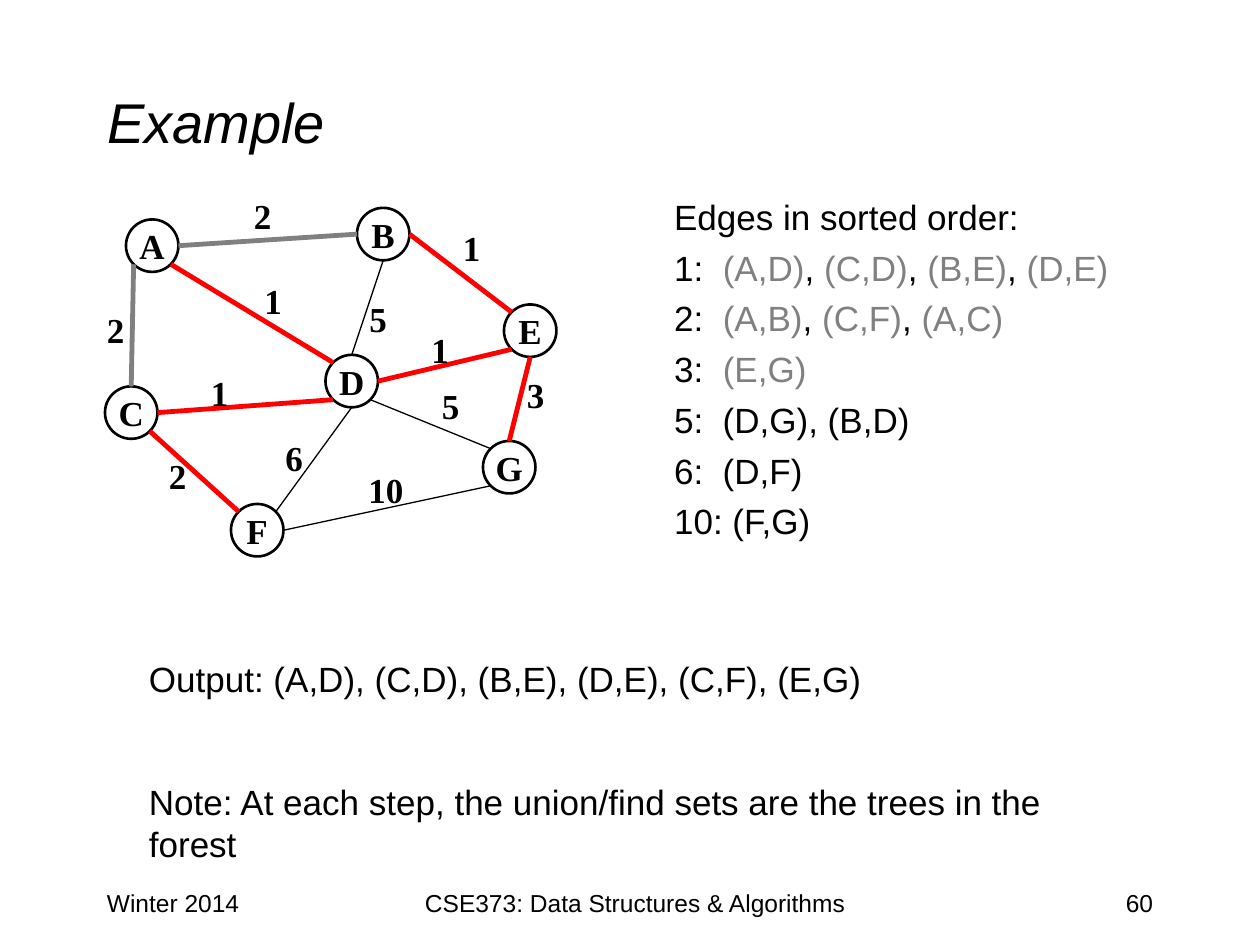
"""Build the minimum spanning tree example slide."""
import math
from dataclasses import dataclass

import pptx
import pptx.dml.color
import pptx.enum.shapes
import pptx.enum.text
import pptx.oxml.ns
import pptx.util

ALIGN = pptx.enum.text.PP_ALIGN
CELL = pptx.util.Inches(1) // 12
NODE_SIZE = 5
LABEL_HEIGHT = 5.28
HANG = 4.5
COLORS = {"ink": "000000", "done": "808080", "tree": "FF0000"}
WIDTHS = {"ink": 0.75, "done": 2.75, "tree": 2.75}
ANGLES = {"right": 0, "lower right": 45, "bottom": 90, "lower left": 135,
          "left": 180, "upper left": 225, "top": 270, "upper right": 315}


@dataclass
class Node:
    name: str
    column: float
    row: float

    def point(self, side: str) -> tuple[int, int]:
        angle = math.radians(ANGLES[side])
        radius = NODE_SIZE / 2
        return (cells(self.column + radius * (1 + math.cos(angle))),
                cells(self.row + radius * (1 + math.sin(angle))))


@dataclass
class Edge:
    start: str
    start_side: str
    end: str
    end_side: str
    state: str
    weight: str
    column: float
    row: float


@dataclass
class Footer:
    text: str
    column: float
    width: float
    align: ALIGN


@dataclass
class Group:
    lead: str
    done: tuple[str, ...] = ()
    waiting: str = ""


NODES = [Node("A", 12, 20.9), Node("B", 34, 19.8), Node("C", 10, 36.8),
         Node("D", 31, 33.8), Node("F", 22, 48), Node("E", 48, 29),
         Node("G", 46, 42)]
EDGES = [
    Edge("A", "lower left", "C", "top", "done", "2", 9, 28.8),
    Edge("B", "left", "A", "right", "done", "2", 23, 17.9),
    Edge("D", "top", "B", "bottom", "ink", "5", 34, 27.7),
    Edge("A", "lower right", "D", "upper left", "tree", "1", 24, 26),
    Edge("C", "right", "D", "lower left", "tree", "1", 18.9, 34.8),
    Edge("D", "right", "E", "lower left", "tree", "1", 39.9, 30.7),
    Edge("E", "upper left", "B", "right", "tree", "1", 42.9, 21),
    Edge("C", "lower right", "F", "upper left", "tree", "2", 14.9, 42.7),
    Edge("D", "bottom", "F", "upper right", "ink", "6", 26, 41),
    Edge("D", "lower right", "G", "upper left", "ink", "5", 40.9, 36),
    Edge("G", "top", "E", "bottom", "tree", "3", 49, 35),
    Edge("F", "right", "G", "lower left", "ink", "10", 33.9, 44),
]
GROUPS = [
    Group("Edges in sorted order:"),
    Group("1:  ", ("(A,D)", "(C,D)", "(B,E)", "(D,E)")),
    Group("2:  ", ("(A,B)", "(C,F)", "(A,C)")),
    Group("3:  ", ("(E,G)",)),
    Group("5:  ", waiting="(D,G), (B,D)"),
    Group("6:  ", waiting="(D,F)"),
    Group("10: ", waiting="(F,G)"),
]
FOOTERS = [Footer("Winter 2014", 9, 25, ALIGN.LEFT),
           Footer("60", 86, 25, ALIGN.RIGHT),
           Footer("CSE373: Data Structures & Algorithms", 38, 45, ALIGN.CENTER)]


def cells(count: float) -> int:
    """Turn a count of grid cells into a length."""
    return round(count * CELL)


def color(name: str) -> pptx.dml.color.RGBColor:
    """Look up a named colour."""
    return pptx.dml.color.RGBColor.from_string(COLORS[name])


def add_span(para, text: str, size: float = 20, face: str = "Arial",
             tone: str = "ink", bold: bool = False, italic: bool = False) -> None:
    """Add one formatted run."""
    span = para.add_run()
    span.text = text
    span.font.size = pptx.util.Pt(size)
    span.font.name = face
    span.font.bold = bold
    span.font.italic = italic
    span.font.color.rgb = color(tone)


def place(box, column: float, row: float, width: float, height: float) -> None:
    """Move a shape to its grid cells."""
    box.left, box.top = cells(column), cells(row)
    box.width, box.height = cells(width), cells(height)


def add_box(page, column: float, row: float, width: float, height: float,
            wrap: bool = True):
    """Add an empty text box and return its first paragraph."""
    box = page.shapes.add_textbox(cells(column), cells(row), cells(width), cells(height))
    box.text_frame.word_wrap = wrap
    return box.text_frame.paragraphs[0]


def format_list_item(para) -> None:
    """Give a paragraph a hanging indent, space before and no bullet."""
    para.space_before = pptx.util.Pt(5)
    properties = para._p.get_or_add_pPr()
    properties.set("marL", str(cells(HANG)))
    properties.set("indent", str(-cells(HANG)))
    properties.append(pptx.oxml.parse_xml(
        f'<a:buNone {pptx.oxml.ns.nsdecls("a")}/>'))


def draw_node(page, node: Node) -> None:
    """Draw a lettered circle."""
    circle = page.shapes.add_shape(
        pptx.enum.shapes.MSO_SHAPE.OVAL, cells(node.column), cells(node.row),
        cells(NODE_SIZE), cells(NODE_SIZE))
    circle.shadow.inherit = False
    circle.fill.background()
    circle.line.color.rgb = color("ink")
    circle.line.width = pptx.util.Pt(1.5)
    frame = circle.text_frame
    frame.word_wrap = False
    frame.vertical_anchor = pptx.enum.text.MSO_ANCHOR.MIDDLE
    frame.paragraphs[0].alignment = ALIGN.CENTER
    add_span(frame.paragraphs[0], node.name, face="Times New Roman", bold=True)


def draw_edge(page, edge: Edge, nodes: dict[str, Node]) -> None:
    """Draw an edge and its weight."""
    line = page.shapes.add_connector(
        pptx.enum.shapes.MSO_CONNECTOR.STRAIGHT,
        *nodes[edge.start].point(edge.start_side),
        *nodes[edge.end].point(edge.end_side))
    line.line.color.rgb = color(edge.state)
    line.line.width = pptx.util.Pt(WIDTHS[edge.state])
    line._element.spPr.append(pptx.oxml.parse_xml(
        f'<a:effectLst {pptx.oxml.ns.nsdecls("a")}/>'))
    width = 2.4 + 1.68 * len(edge.weight)
    para = add_box(page, edge.column, edge.row, width, LABEL_HEIGHT, wrap=False)
    add_span(para, edge.weight, face="Times New Roman", bold=True)


def fill_groups(frame) -> None:
    """List the edges by weight, with finished ones greyed."""
    for index, group in enumerate(GROUPS):
        para = frame.add_paragraph() if index else frame.paragraphs[0]
        format_list_item(para)
        add_span(para, group.lead + group.waiting)
        for position, pair in enumerate(group.done):
            if position:
                add_span(para, ", ")
            add_span(para, pair, tone="done")


def main() -> None:
    """Build and save the deck."""
    deck = pptx.Presentation()
    deck.slide_width, deck.slide_height = cells(120), cells(90)
    page = deck.slides.add_slide(deck.slide_layouts[1])
    title, body = page.placeholders
    place(title, 9, 4, 102, 15)
    title.text_frame.vertical_anchor = pptx.enum.text.MSO_ANCHOR.MIDDLE
    heading = title.text_frame.paragraphs[0]
    heading.alignment = ALIGN.LEFT
    add_span(heading, "Example", size=32, italic=True)
    place(body, 63, 18, 48, 37)
    body.text_frame.auto_size = pptx.enum.text.MSO_AUTO_SIZE.NONE
    fill_groups(body.text_frame)
    for footer in FOOTERS:
        para = add_box(page, footer.column, 84, footer.width, 6)
        para.alignment = footer.align
        add_span(para, footer.text, size=14)
    for node in NODES:
        draw_node(page, node)
    nodes = {node.name: node for node in NODES}
    for edge in EDGES:
        draw_edge(page, edge, nodes)
    output = add_box(page, 13, 62, 93, 7)
    format_list_item(output)
    add_span(output, "Output: (A,D), (C,D), (B,E), (D,E), (C,F), (E,G)")
    note = add_box(page, 13, 73.7, 96.4, LABEL_HEIGHT)
    add_span(note, "Note: At each step, the union/find sets are the trees in the forest")
    deck.save("out.pptx")


if __name__ == "__main__":
    main()
